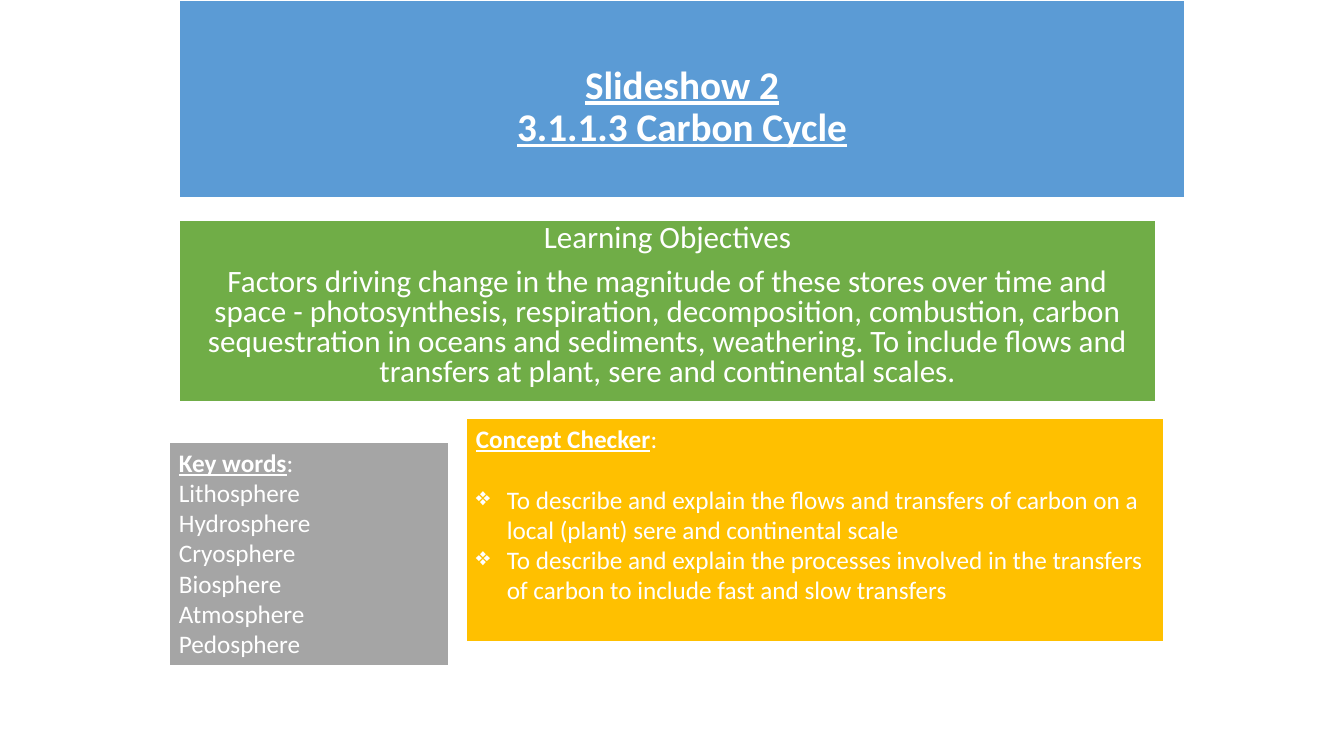
from pptx import Presentation
from pptx.dml.color import RGBColor
from pptx.enum.shapes import MSO_SHAPE
from pptx.enum.text import MSO_ANCHOR, PP_ALIGN
from pptx.oxml.ns import qn
from pptx.util import Pt
from lxml import etree

RECT = MSO_SHAPE.RECTANGLE
TOP, BOTTOM = MSO_ANCHOR.TOP, MSO_ANCHOR.BOTTOM
LEFT, CENTER = PP_ALIGN.LEFT, PP_ALIGN.CENTER

COLORS = {"white": "FFFFFF", "blue": "5B9BD5", "green": "70AD47",
          "grey": "A5A5A5", "gold": "FFC000"}
HEADING = {"bold": True, "underline": True}
KEY_WORDS = ["Lithosphere", "Hydrosphere", "Cryosphere",
             "Biosphere", "Atmosphere", "Pedosphere"]
CONCEPTS = [
    "To describe and explain the flows and transfers of carbon on a local "
    "(plant) sere and continental scale",
    "To describe and explain the processes involved in the transfers of "
    "carbon to include fast and slow transfers",
]
OBJECTIVES = (
    "Factors driving change in the magnitude of these stores over time and "
    "space - photosynthesis, respiration, decomposition, combustion, carbon "
    "sequestration in oceans and sediments, weathering. To include flows and "
    "transfers at plant, sere and continental scales."
)


def px(n):
    return round(n * 914400 / 100.8)


def rgb(name):
    return RGBColor.from_string(COLORS[name])


def set_attrs(obj, values):
    for name, value in values.items():
        setattr(obj, name, value)


def add_panel(s, box, color, anchor=TOP):
    """Add a filled rectangle and return its text frame."""
    sp = s.shapes.add_shape(RECT, *(px(n) for n in box))
    sp.shadow.inherit = False
    sp.fill.solid()
    sp.fill.fore_color.rgb = rgb(color)
    sp.line.color.rgb = rgb("white")
    sp.line.width = Pt(1.5)
    tf = sp.text_frame
    set_attrs(tf, {"word_wrap": True, "vertical_anchor": anchor})
    return tf


def next_paragraph(tf, **fmt):
    """Return the empty first paragraph, or a new one after the text."""
    p = tf.paragraphs[0] if not tf.text else tf.add_paragraph()
    set_attrs(p, {"alignment": LEFT, **fmt})
    return p


def add_run(p, text, size, **fmt):
    r = p.add_run()
    r.text = text
    set_attrs(r.font, {"name": "Calibri", "size": Pt(size), **fmt})
    r.font.color.rgb = rgb("white")


def add_heading(tf, text):
    p = next_paragraph(tf)
    add_run(p, text, 18, **HEADING)
    add_run(p, ":", 18)


def add_bullet(p, char, indent):
    pPr = p._p.get_or_add_pPr()
    pPr.set("marL", str(px(indent)))
    pPr.set("indent", str(-px(indent)))
    etree.SubElement(pPr, qn("a:buChar")).set("char", char)


def main():
    prs = Presentation()
    prs.slide_width, prs.slide_height = px(1344), px(756)
    s = prs.slides.add_slide(prs.slide_layouts[6])

    # Title
    tf = add_panel(s, (179, 0, 1006, 198), "blue", BOTTOM)
    tf.margin_bottom = px(48)
    p = next_paragraph(tf, alignment=CENTER, line_spacing=0.9)
    add_run(p, "Slideshow 2", 28, **HEADING)
    p.add_line_break()
    add_run(p, "3.1.1.3 Carbon Cycle", 28, **HEADING)

    # Learning objectives
    tf = add_panel(s, (179, 220, 977, 182), "green")
    for text, gap in (("Learning Objectives", 0), (OBJECTIVES, 10)):
        p = next_paragraph(tf, alignment=CENTER, line_spacing=0.8,
                           space_before=Pt(gap))
        add_run(p, text, 22.2)

    # Key words
    tf = add_panel(s, (169, 442, 280, 224), "grey")
    add_heading(tf, "Key words")
    for word in KEY_WORDS:
        add_run(next_paragraph(tf), word, 18)

    # Concept checker
    tf = add_panel(s, (466, 418, 698, 224), "gold")
    add_heading(tf, "Concept Checker")
    for text, gap in zip(CONCEPTS, (22, 0)):
        p = next_paragraph(tf, space_before=Pt(gap))
        add_bullet(p, "❖", 31)
        add_run(p, text, 18)

    prs.save("out.pptx")


if __name__ == "__main__":
    main()
